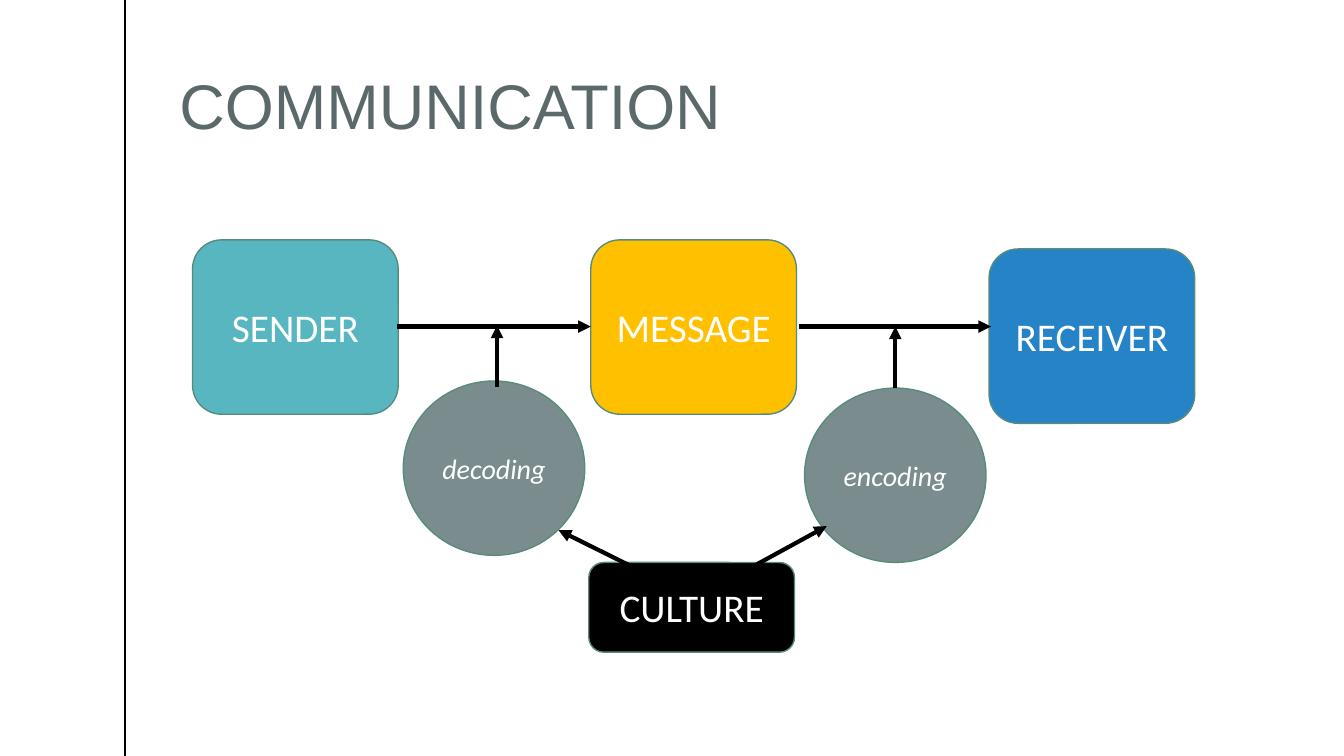
import pptx
import pptx.util
import pptx.dml.color
import pptx.enum.shapes
import pptx.enum.text
import pptx.oxml
import pptx.oxml.ns

Inches = pptx.util.Inches
Pt = pptx.util.Pt
RGBColor = pptx.dml.color.RGBColor
Shape = pptx.enum.shapes.MSO_SHAPE
Anchor = pptx.enum.text.MSO_ANCHOR
Align = pptx.enum.text.PP_ALIGN

BLACK = RGBColor(0x00, 0x00, 0x00)
WHITE = RGBColor(0xFF, 0xFF, 0xFF)
SLATE = RGBColor(0x5B, 0x69, 0x6B)
GREY = RGBColor(0x7A, 0x8C, 0x8E)
OUTLINE = RGBColor(0x57, 0x8C, 0x7C)
TEAL = RGBColor(0x58, 0xB6, 0xC0)
AMBER = RGBColor(0xFF, 0xC0, 0x00)
BLUE = RGBColor(0x26, 0x83, 0xC6)


def write_text(shape, text, size, font="Calibri", color=WHITE, italic=False,
               align=Align.CENTER, anchor=Anchor.MIDDLE, line_spacing=1.0):
    frame = shape.text_frame
    frame.word_wrap = True
    frame.vertical_anchor = anchor
    paragraph = frame.paragraphs[0]
    paragraph.alignment = align
    paragraph.line_spacing = line_spacing
    run = paragraph.add_run()
    run.text = text
    run.font.name = font
    run.font.size = Pt(size)
    run.font.italic = italic
    run.font.color.rgb = color


def add_node(slide, kind, left, top, width, height, fill, text, size, italic=False):
    """Add an outlined shape with a centred label."""
    shape = slide.shapes.add_shape(
        kind, Inches(left), Inches(top), Inches(width), Inches(height))
    shape.shadow.inherit = False
    shape.fill.solid()
    shape.fill.fore_color.rgb = fill
    shape.line.color.rgb = OUTLINE
    shape.line.width = Pt(1)
    write_text(shape, text, size, italic=italic)


def add_line(slide, start, end, width, arrow=False):
    connector = slide.shapes.add_connector(
        pptx.enum.shapes.MSO_CONNECTOR.STRAIGHT,
        *(Inches(value) for value in (*start, *end)))
    connector.line.color.rgb = BLACK
    connector.line.width = Pt(width)
    if arrow:
        tail = pptx.oxml.parse_xml(
            f'<a:tailEnd {pptx.oxml.ns.nsdecls("a")} type="triangle"/>')
        connector.line._get_or_add_ln().append(tail)
    effects = pptx.oxml.parse_xml(f'<a:effectLst {pptx.oxml.ns.nsdecls("a")}/>')
    connector._element.spPr.append(effects)


def add_title(slide, left, top, width, height):
    box = slide.shapes.add_textbox(
        Inches(left), Inches(top), Inches(width), Inches(height))
    box.text_frame.margin_left = box.text_frame.margin_right = 0
    write_text(box, "COMMUNICATION", 45, font="Arial", color=SLATE,
               align=Align.LEFT, anchor=Anchor.BOTTOM, line_spacing=0.9)


def add_diagram(slide, left, top):
    """Place the communication model with its top left corner at the given point."""
    box_width, box_height, pitch = 2.04, 1.73, 3.95
    stages = (("SENDER", TEAL, 0), ("MESSAGE", AMBER, 0), ("RECEIVER", BLUE, 0.09))
    for index, (text, fill, drop) in enumerate(stages):
        add_node(slide, Shape.ROUNDED_RECTANGLE, left + index * pitch, top + drop,
                 box_width, box_height, fill, text, 28)

    for text, across, down in (("decoding", 2.09, 1.4), ("encoding", 6.07, 1.47)):
        add_node(slide, Shape.OVAL, left + across, top + down, 1.8, box_height,
                 GREY, text, 20, italic=True)

    add_node(slide, Shape.ROUNDED_RECTANGLE, left + 3.93, top + 3.2,
             box_width, 0.89, BLACK, "CULTURE", 28)

    arrows = (
        ((2.03, 0.86), (3.95, 0.86)),  # sender to message
        ((6.01, 0.86), (7.92, 0.86)),  # message to receiver
        ((6.97, 1.47), (6.97, 0.86)),  # encoding to its arrow
        ((3.02, 1.46), (3.02, 0.85)),  # decoding to its arrow
        ((4.76, 3.44), (3.63, 2.88)),  # culture to decoding
        ((5.43, 3.31), (6.29, 2.84)),  # culture to encoding
    )
    for ends in arrows:
        start, end = ((left + across, top + down) for across, down in ends)
        add_line(slide, start, end, 3, arrow=True)


def main():
    presentation = pptx.Presentation()
    presentation.slide_width = Inches(13.33)
    presentation.slide_height = Inches(7.5)
    slide = presentation.slides.add_slide(presentation.slide_layouts[6])
    add_line(slide, (1.24, 0), (1.24, 7.5), 1)
    add_title(slide, 1.78, 0.37, 11.08, 1.1)
    add_diagram(slide, 1.91, 2.38)
    presentation.save("out.pptx")


if __name__ == "__main__":
    main()
